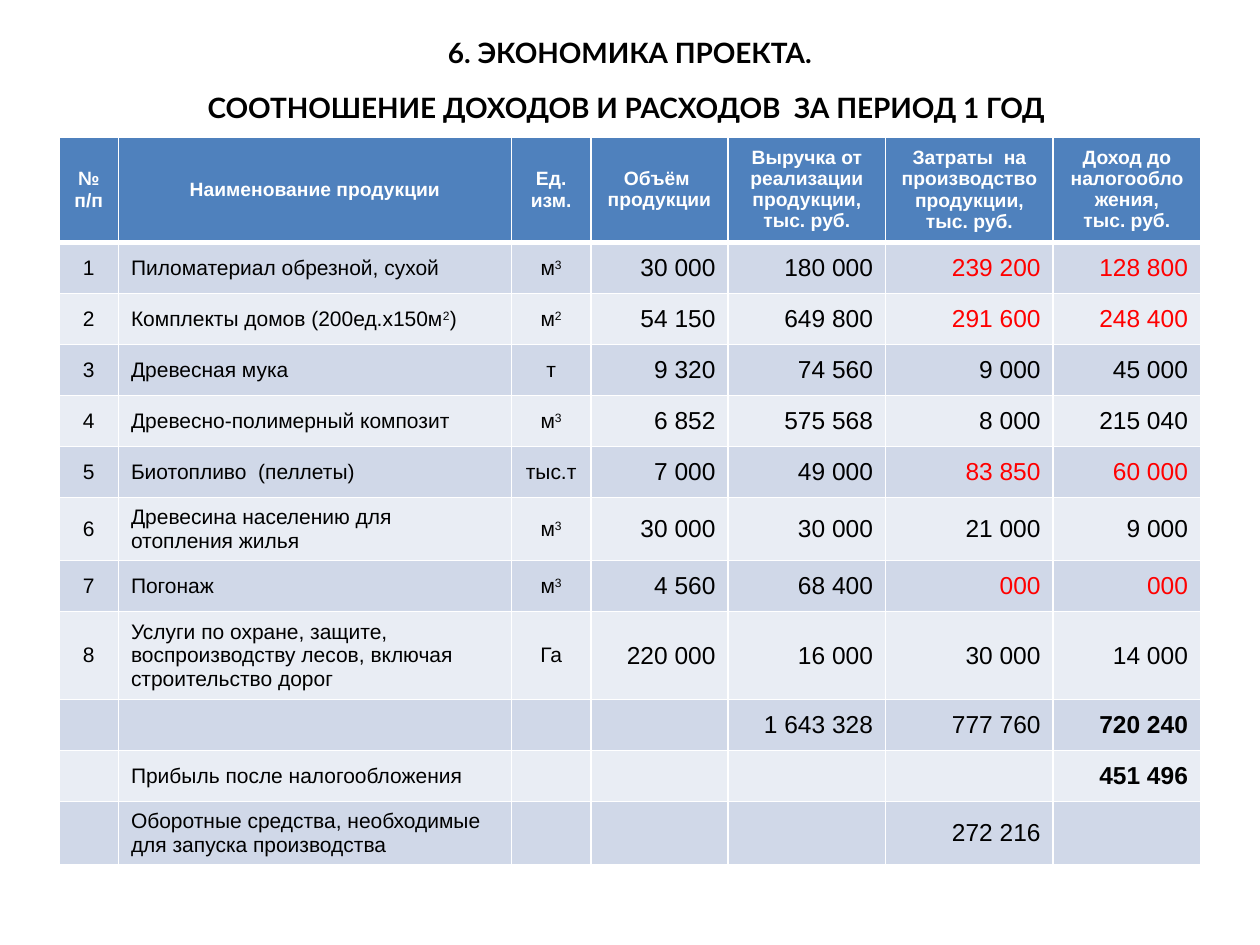
from lxml import etree
from pptx import Presentation
from pptx import util as u
from pptx.dml.color import RGBColor
from pptx.enum import text as t
from pptx.oxml.ns import qn

HUES = {"black": "000000", "white": "FFFFFF", "red": "FF0000",
        "head": "4F81BD", "dark": "D0D8E8", "light": "E9EDF4"}
LEFT, MID, RIGHT = t.PP_ALIGN.LEFT, t.PP_ALIGN.CENTER, t.PP_ALIGN.RIGHT

TITLE = "6. ЭКОНОМИКА ПРОЕКТА.\nСООТНОШЕНИЕ ДОХОДОВ И РАСХОДОВ  ЗА ПЕРИОД 1 ГОД "
COLS = [4.7, 31.2, 6.3, 10.9, 12.5, 13.3, 11.7]
SIDES = [MID, LEFT, MID] + [RIGHT] * 4
HEAD = ["№\nп/п", "Наименование продукции", "Ед. изм.", "Объём \nпродукции",
        "Выручка от реализации продукции, тыс. руб.",
        "Затраты  на производство продукции, тыс. руб.",
        "Доход до налогообложения,\nтыс. руб."]
TIGHT = {3, 4, 6}  # header columns with fixed line spacing
ROWS = [
    ["1", "Пиломатериал обрезной, сухой", "м^3", "30 000", "180 000", "239 200", "128 800"],
    ["2", "Комплекты домов (200ед.х150м^2^)", "м^2", "54 150", "649 800", "291 600", "248 400"],
    ["3", "Древесная мука", "т", "9 320", "74 560", "9 000", "45 000"],
    ["4", "Древесно-полимерный композит", "м^3", "6 852", "575 568", "8 000", "215 040"],
    ["5", "Биотопливо  (пеллеты)", "тыс.т", "7 000", "49 000", "83 850", "60 000"],
    ["6", "Древесина населению для отопления жилья", "м^3",
     "30 000", "30 000", "21 000", "9 000"],
    ["7", "Погонаж", "м^3", "4 560", "68 400", "000", "000"],
    ["8", "Услуги по охране, защите, воспроизводству лесов, включая строительство дорог",
     "Га", "220 000", "16 000", "30 000", "14 000"],
    ["", "", "", "", "1 643 328", "777 760", "720 240"],
    ["", "Прибыль после налогообложения", "", "", "", "", "451 496"],
    ["", "Оборотные средства, необходимые для запуска производства",
     "", "", "", "272 216", ""],
]
RED = {(row, col) for row in (1, 2, 5, 7) for col in (5, 6)}
BOLD = {(9, 6), (10, 6)}


def write(frame, words, size=12, hue="black", bold=False, face="Arial",
          side=LEFT, gap=0, lead=None):
    """Fill a text frame; a caret switches superscript on and off."""
    for num, line in enumerate(words.split("\n")):
        para = frame.add_paragraph() if num else frame.paragraphs[0]
        para.alignment = side
        para.space_before = u.Pt(gap if num else 0)
        if lead:
            para.line_spacing = u.Pt(lead)
        for part, piece in enumerate(line.split("^")):
            if not piece:
                continue
            run = para.add_run()
            run.text = piece
            font = run.font
            font.size, font.bold, font.name = u.Pt(size), bold, face
            font.color.rgb = RGBColor.from_string(HUES[hue])
            if part % 2:
                run._r.get_or_add_rPr().set("baseline", "30000")


def edge(cell, top=1, base=1):
    """Draw the white borders of a table cell."""
    props = cell._tc.get_or_add_tcPr()
    for tag, width in (("lnL", 1), ("lnR", 1), ("lnT", top), ("lnB", base)):
        line = etree.SubElement(props, qn("a:" + tag), w=str(u.Pt(width)))
        fill = etree.SubElement(line, qn("a:solidFill"))
        etree.SubElement(fill, qn("a:srgbClr"), val=HUES["white"])


class Deck:
    """Places elements on a grid of 100 columns by 75 rows."""

    def __init__(self):
        self.show = Presentation()
        self.show.slide_width, self.show.slide_height = u.Inches(10), u.Inches(7.5)
        self.slide = self.show.slides.add_slide(self.show.slide_layouts[5])

    def span(self, *units):
        return [round(n * self.show.slide_width / 100) for n in units]

    def title(self, words, *box):
        shape = self.slide.shapes.title
        shape.left, shape.top, shape.width, shape.height = self.span(*box)
        frame = shape.text_frame
        frame.word_wrap = True
        frame.auto_size = t.MSO_AUTO_SIZE.SHAPE_TO_FIT_TEXT
        frame.vertical_anchor = t.MSO_ANCHOR.MIDDLE
        write(frame, words, size=16, bold=True, face="Lato", side=MID, gap=12)

    def table(self, left, top, high):
        count = len(ROWS) + 1
        box = self.span(left, top, sum(COLS), high * count)
        grid = self.slide.shapes.add_table(count, len(COLS), *box).table
        grid.horz_banding = False
        for col, wide in zip(grid.columns, self.span(*COLS)):
            col.width = wide
        for row, line in enumerate([HEAD] + ROWS):
            for col, words in enumerate(line):
                self.cell(grid.cell(row, col), row, col, words)

    def cell(self, cell, row, col, words):
        cell.vertical_anchor = t.MSO_ANCHOR.MIDDLE
        edge(cell, top=3 if row == 1 else 1, base=1 if row else 3)
        cell.fill.solid()
        hue = ("dark" if row % 2 else "light") if row else "head"
        cell.fill.fore_color.rgb = RGBColor.from_string(HUES[hue])
        if row:
            write(cell.text_frame, words, size=14 if col > 2 else 12,
                  hue="red" if (row, col) in RED else "black",
                  bold=(row, col) in BOLD, side=SIDES[col])
        else:
            write(cell.text_frame, words, size=11, hue="white", bold=True,
                  side=MID, lead=12 if col in TIGHT else None)


def main():
    deck = Deck()
    deck.title(TITLE, 0, 2.3, 100, 8.1)
    deck.table(4.7, 10.9, 4.05)
    deck.show.save("out.pptx")


if __name__ == "__main__":
    main()
